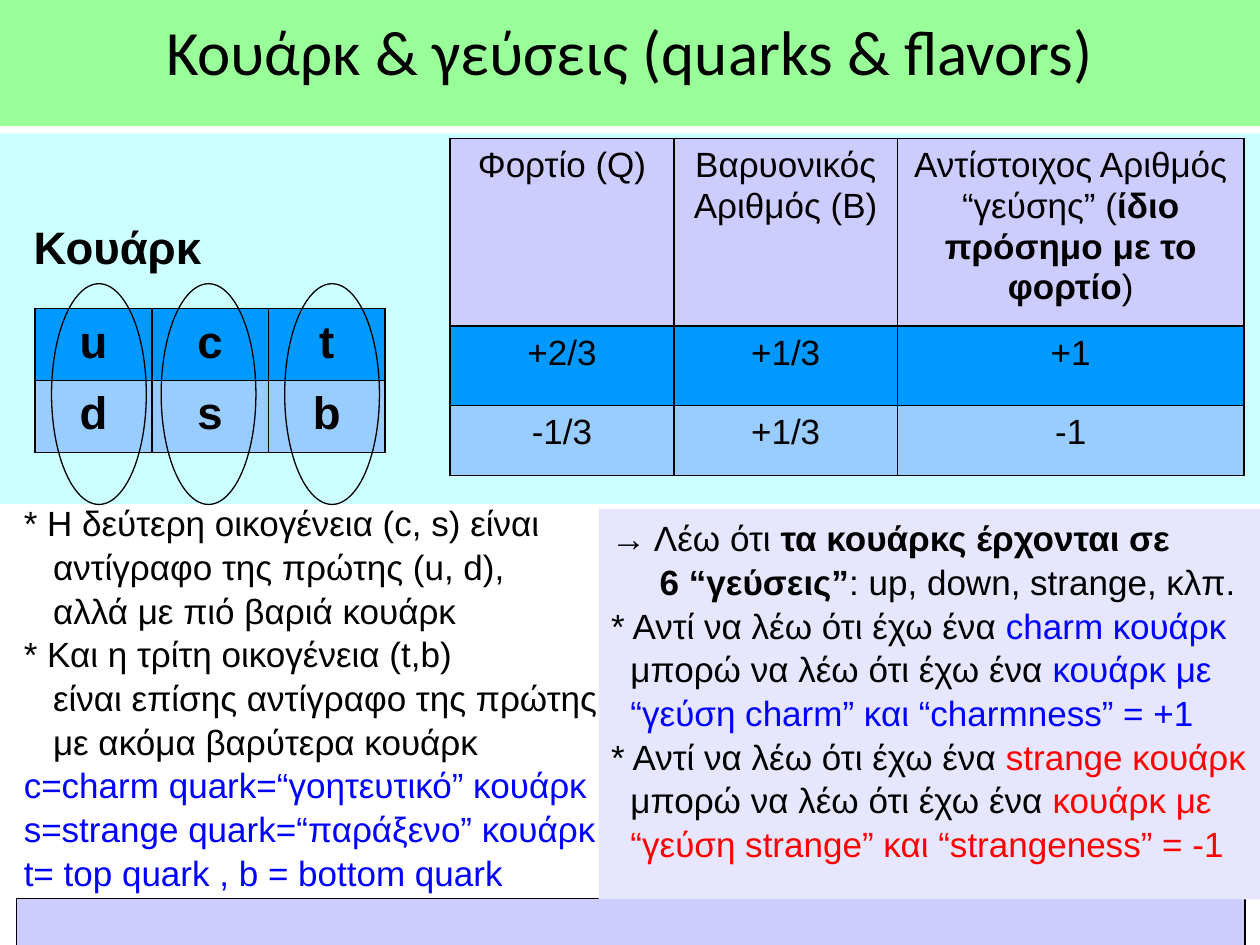
from lxml import etree
from pptx import Presentation
from pptx.dml.color import RGBColor
from pptx.enum.shapes import MSO_SHAPE
from pptx.enum.text import MSO_ANCHOR, PP_ALIGN
from pptx.oxml.ns import qn
from pptx.util import Cm, Pt

RECTANGLE, OVAL = MSO_SHAPE.RECTANGLE, MSO_SHAPE.OVAL
LEFT, CENTER = PP_ALIGN.LEFT, PP_ALIGN.CENTER
TOP = MSO_ANCHOR.TOP

BLACK, BLUE, RED = "000000", "0000FF", "FF0000"
LILAC, PALE_LILAC, CYAN, GREEN = "CCCCFF", "E6E6FF", "CCFFFF", "99FF99"
UP_BLUE, DOWN_BLUE = "0099FF", "99CCFF"

FAMILY_NOTES = [
    (0, ["* Η δεύτερη οικογένεια (c, s) είναι"]),
    (0.59, ["αντίγραφο της πρώτης (u, d),"]),
    (0.59, ["αλλά με πιό βαριά κουάρκ"]),
    (0, ["* Και η τρίτη οικογένεια (t,b)"]),
    (0.59, ["είναι επίσης αντίγραφο της πρώτης,"]),
    (0.59, ["με ακόμα βαρύτερα κουάρκ"]),
    (0, [("c=charm quark=“γοητευτικό” κουάρκ", {"color": BLUE})]),
    (0, [("s=strange quark=“παράξενο” κουάρκ", {"color": BLUE})]),
    (0, [("t= top quark , b = bottom quark", {"color": BLUE})]),
]


def flavor_lines(flavor, number, color):
    """Return the three lines that explain one flavor."""
    return [
        (0, ["* Αντί να λέω ότι έχω ένα ", (f"{flavor} κουάρκ", {"color": color})]),
        (0.39, ["μπορώ να λέω ότι έχω ένα ", ("κουάρκ με", {"color": color})]),
        (0.39, [(f"“γεύση {flavor}” και “{flavor}ness” = {number}", {"color": color})]),
    ]


FLAVOR_NOTES = [
    (0, ["→ Λέω ότι ", ("τα κουάρκς έρχονται σε", {"bold": True})]),
    (0.98, [("6 “γεύσεις”", {"bold": True}), ": up, down, strange, κλπ."]),
    *flavor_lines("charm", "+1", BLUE),
    *flavor_lines("strange", "-1", RED),
]

QUARKS = [["u", "c", "t"], ["d", "s", "b"]]
FLAVOR_HEADING = ["Αντίστοιχος Αριθμός “γεύσης” (",
                  ("ίδιο πρόσημο με το φορτίο", {"bold": True}), ")"]
CHARGES = [
    ["Φορτίο (Q)", "Βαρυονικός Αριθμός (Β)", FLAVOR_HEADING],
    ["+2/3", "+1/3", "+1"],
    ["-1/3", "+1/3", "-1"],
]


def rgb(value):
    """Turn a hex string into a colour."""
    return RGBColor.from_string(value)


def add_text(paragraph, text, size=20, font="Arial", color=BLACK, bold=False):
    """Add one formatted run to a paragraph."""
    run = paragraph.add_run()
    run.text = text
    run.font.size, run.font.name, run.font.bold = Pt(size), font, bold
    run.font.color.rgb = rgb(color)


def add_runs(paragraph, runs, **text_format):
    """Add plain strings and (string, format) pairs to a paragraph."""
    for run in runs:
        text, extra = (run, {}) if isinstance(run, str) else run
        add_text(paragraph, text, **{**text_format, **extra})


class SlideBuilder:
    """Holds the current slide and its shared style."""

    line_width = Pt(0.75)
    line_spacing = 1.04

    def __init__(self, slide):
        """Keep the slide to draw on."""
        self.slide = slide

    def shape(self, kind, left, top, width, height, fill=None, outlined=False):
        """Add a preset shape without shadow."""
        shape = self.slide.shapes.add_shape(kind, Cm(left), Cm(top), Cm(width), Cm(height))
        shape.shadow.inherit = False
        if fill:
            shape.fill.solid()
            shape.fill.fore_color.rgb = rgb(fill)
        else:
            shape.fill.background()
        if outlined:
            shape.line.color.rgb = rgb(BLACK)
            shape.line.width = self.line_width
        else:
            shape.line.fill.background()
        return shape

    def text_box(self, left, top, width, height):
        """Add an empty text box."""
        return self.slide.shapes.add_textbox(Cm(left), Cm(top), Cm(width), Cm(height))

    def fill_text(self, shape, lines, align=LEFT, **text_format):
        """Fill a shape with (indent, runs) lines from the top down."""
        frame = shape.text_frame
        frame.word_wrap = True
        frame.vertical_anchor = TOP
        for index, (indent, runs) in enumerate(lines):
            paragraph = frame.add_paragraph() if index else frame.paragraphs[0]
            paragraph.alignment = align
            paragraph.line_spacing = self.line_spacing
            if indent:
                paragraph._p.get_or_add_pPr().set("marL", str(Cm(indent)))
            add_runs(paragraph, runs, **text_format)

    def border(self, cell):
        """Draw a black line on each side of a cell."""
        properties = cell._tc.get_or_add_tcPr()
        for side in ("a:lnL", "a:lnR", "a:lnT", "a:lnB"):
            line = etree.SubElement(properties, qn(side), w=str(Pt(1)))
            fill = etree.SubElement(line, qn("a:solidFill"))
            etree.SubElement(fill, qn("a:srgbClr"), val=BLACK)

    def table(self, left, top, widths, heights, rows, fills, **text_format):
        """Add a bordered table with one fill per row."""
        table = self.slide.shapes.add_table(
            len(heights), len(widths), Cm(left), Cm(top),
            Cm(sum(widths)), Cm(sum(heights))).table
        table.first_row = table.horz_banding = False
        for column, width in zip(table.columns, widths):
            column.width = Cm(width)
        for row, height, contents, fill in zip(table.rows, heights, rows, fills):
            row.height = Cm(height)
            for cell, content in zip(row.cells, contents):
                self.border(cell)
                cell.fill.solid()
                cell.fill.fore_color.rgb = rgb(fill)
                paragraph = cell.text_frame.paragraphs[0]
                paragraph.alignment = CENTER
                paragraph.line_spacing = self.line_spacing
                runs = [content] if isinstance(content, str) else content
                add_runs(paragraph, runs, **text_format)


def main():
    """Build the quark slide and save it."""
    presentation = Presentation()
    presentation.slide_width, presentation.slide_height = Cm(25.4), Cm(19.05)
    builder = SlideBuilder(presentation.slides.add_slide(presentation.slide_layouts[6]))

    builder.shape(RECTANGLE, 0.33, 18.11, 24.77, 1.37, LILAC, outlined=True)
    builder.shape(RECTANGLE, 0, 2.69, 25.4, 7.47, CYAN)

    title = builder.shape(RECTANGLE, 0, 0, 25.4, 2.54, GREEN)
    title.text_frame.margin_top = Cm(0.2)
    builder.fill_text(title, [(0, ["Κουάρκ & γεύσεις (quarks & flavors)"])],
                      CENTER, size=36, font="Calibri")

    builder.table(0.71, 6.22, [2.35] * 3, [1.45] * 2, QUARKS,
                  [UP_BLUE, DOWN_BLUE], size=26, bold=True)
    builder.fill_text(builder.text_box(0.43, 4.24, 5.97, 1.35),
                      [(0, ["Κουάρκ"])], size=26, bold=True)
    builder.table(9.07, 2.79, [4.52, 4.5, 6.99], [3.78, 1.6, 1.42], CHARGES,
                  [LILAC, UP_BLUE, DOWN_BLUE])

    for left in (1.04, 3.25, 5.74):
        builder.shape(OVAL, left, 5.72, 1.91, 4.45, outlined=True)

    builder.fill_text(builder.text_box(0.23, 9.96, 12.45, 8.71), FAMILY_NOTES)
    flavor_panel = builder.shape(RECTANGLE, 12.07, 10.26, 13.33, 7.87, PALE_LILAC)
    builder.fill_text(flavor_panel, FLAVOR_NOTES)

    presentation.save("out.pptx")


if __name__ == "__main__":
    main()
